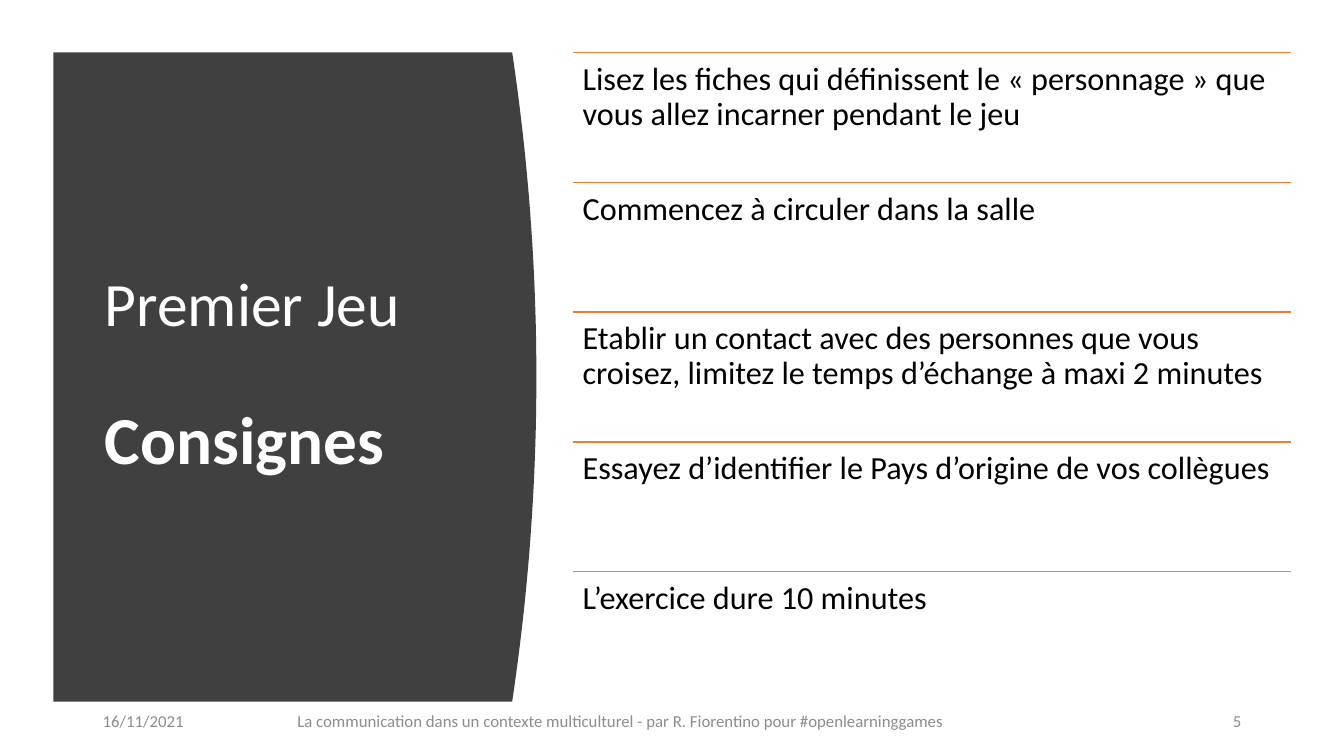
import dataclasses

import pptx
import pptx.dml.color
import pptx.enum.shapes
import pptx.enum.text
import pptx.oxml.ns
import pptx.util
from lxml import etree

Inches = pptx.util.Inches
ALIGN = pptx.enum.text.PP_ALIGN
ANCHOR = pptx.enum.text.MSO_ANCHOR


@dataclasses.dataclass(frozen=True)
class Theme:
    font: str = "Calibri"
    panel: str = "404040"
    title: str = "FFFFFF"
    body: str = "000000"
    rule: str = "ED7D31"
    footer: str = "8C8C8C"
    title_size: int = 44
    strong_size: int = 48
    body_size: int = 23
    footer_size: int = 12


THEME = Theme()
WIDTH, HEIGHT = 13.33, 7.5

# Content band and the column of instructions
TOP, BOTTOM = 0.52, 6.96
LIST_LEFT, LIST_WIDTH = 5.68, 7.12

# Panel: straight left side, right side bulging as a parabola
PANEL_LEFT, PANEL_RIGHT, BULGE = 0.53, 5.08, 0.24
CURVE_STEPS = 48

INSTRUCTIONS = [
    "Lisez les fiches qui définissent le « personnage » que vous allez incarner pendant le jeu",
    "Commencez à circuler dans la salle",
    "Etablir un contact avec des personnes que vous croisez, limitez le temps d’échange à maxi 2 minutes",
    "Essayez d’identifier le Pays d’origine de vos collègues",
    "L’exercice dure 10 minutes",
]

# Text, left, width, alignment
FOOTERS = [
    ("16/11/2021", 0.92, 1.04, ALIGN.LEFT),
    ("La communication dans un contexte multiculturel - par R. Fiorentino pour #openlearninggames",
     2.18, 7.95, ALIGN.CENTER),
    ("5", 10.27, 2.14, ALIGN.RIGHT),
]


def rgb(color):
    return pptx.dml.color.RGBColor.from_string(color)


def set_attributes(target, values):
    for name, value in values.items():
        setattr(target, name, value)


def place(shape, left, top, width, height):
    set_attributes(shape, {"left": Inches(left), "top": Inches(top),
                           "width": Inches(width), "height": Inches(height)})


def add_run(paragraph, text, size, color, bold=False):
    run = paragraph.add_run()
    run.text = text
    set_attributes(run.font, {"name": THEME.font, "size": pptx.util.Pt(size), "bold": bold})
    run.font.color.rgb = rgb(color)


def add_text(slide, text, box, size, color, frame_format, paragraph_format):
    shape = slide.shapes.add_textbox(*map(Inches, box))
    set_attributes(shape.text_frame, {"word_wrap": True, **frame_format})
    paragraph = shape.text_frame.paragraphs[0]
    set_attributes(paragraph, paragraph_format)
    add_run(paragraph, text, size, color)


def add_panel(slide):
    middle, half = (TOP + BOTTOM) / 2, (BOTTOM - TOP) / 2
    points = []
    for step in range(CURVE_STEPS + 1):
        offset = 2 * step / CURVE_STEPS - 1
        points.append((Inches(PANEL_RIGHT + BULGE * (1 - offset ** 2)),
                       Inches(middle + half * offset)))
    points.append((Inches(PANEL_LEFT), Inches(BOTTOM)))
    builder = slide.shapes.build_freeform(Inches(PANEL_LEFT), Inches(TOP))
    builder.add_line_segments(points, close=True)
    panel = builder.convert_to_shape()
    panel.shadow.inherit = False
    panel.fill.solid()
    panel.fill.fore_color.rgb = rgb(THEME.panel)
    panel.line.fill.background()
    # Send the panel behind the title
    slide.shapes._spTree.insert(2, panel._element)


def format_title(slide):
    title = slide.shapes.title
    place(title, 0.94, 1.11, 3.74, 5.24)
    set_attributes(title.text_frame, {"word_wrap": True, "vertical_anchor": ANCHOR.MIDDLE,
                                      "auto_size": pptx.enum.text.MSO_AUTO_SIZE.NONE})
    paragraph = title.text_frame.paragraphs[0]
    set_attributes(paragraph, {"alignment": ALIGN.LEFT, "line_spacing": 0.9})
    add_run(paragraph, "Premier Jeu", THEME.title_size, THEME.title)
    paragraph.add_line_break()
    paragraph.add_line_break()
    add_run(paragraph, "Consignes", THEME.strong_size, THEME.title, bold=True)


def add_rule(slide, top):
    rule = slide.shapes.add_connector(
        pptx.enum.shapes.MSO_CONNECTOR.STRAIGHT,
        *map(Inches, (LIST_LEFT, top, LIST_LEFT + LIST_WIDTH, top)))
    rule.line.color.rgb = rgb(THEME.rule)
    rule.line.width = pptx.util.Pt(1)
    etree.SubElement(rule._element.spPr, pptx.oxml.ns.qn("a:effectLst"))


def add_instructions(slide):
    row_height = (BOTTOM - TOP) / len(INSTRUCTIONS)
    margins = {f"margin_{side}": Inches(0.1) for side in ("left", "top", "right", "bottom")}
    for row, text in enumerate(INSTRUCTIONS):
        top = TOP + row * row_height
        add_rule(slide, top)
        add_text(slide, text, (LIST_LEFT, top, LIST_WIDTH, row_height),
                 THEME.body_size, THEME.body, margins, {"line_spacing": 0.9})


def add_footers(slide):
    for text, left, width, alignment in FOOTERS:
        add_text(slide, text, (left, 6.95, width, 0.4), THEME.footer_size, THEME.footer,
                 {"vertical_anchor": ANCHOR.MIDDLE}, {"alignment": alignment})


def main():
    presentation = pptx.Presentation()
    set_attributes(presentation, {"slide_width": Inches(WIDTH), "slide_height": Inches(HEIGHT)})
    slide = presentation.slides.add_slide(presentation.slide_layouts.get_by_name("Title Only"))
    add_panel(slide)
    format_title(slide)
    add_instructions(slide)
    add_footers(slide)
    presentation.save("out.pptx")


if __name__ == "__main__":
    main()
